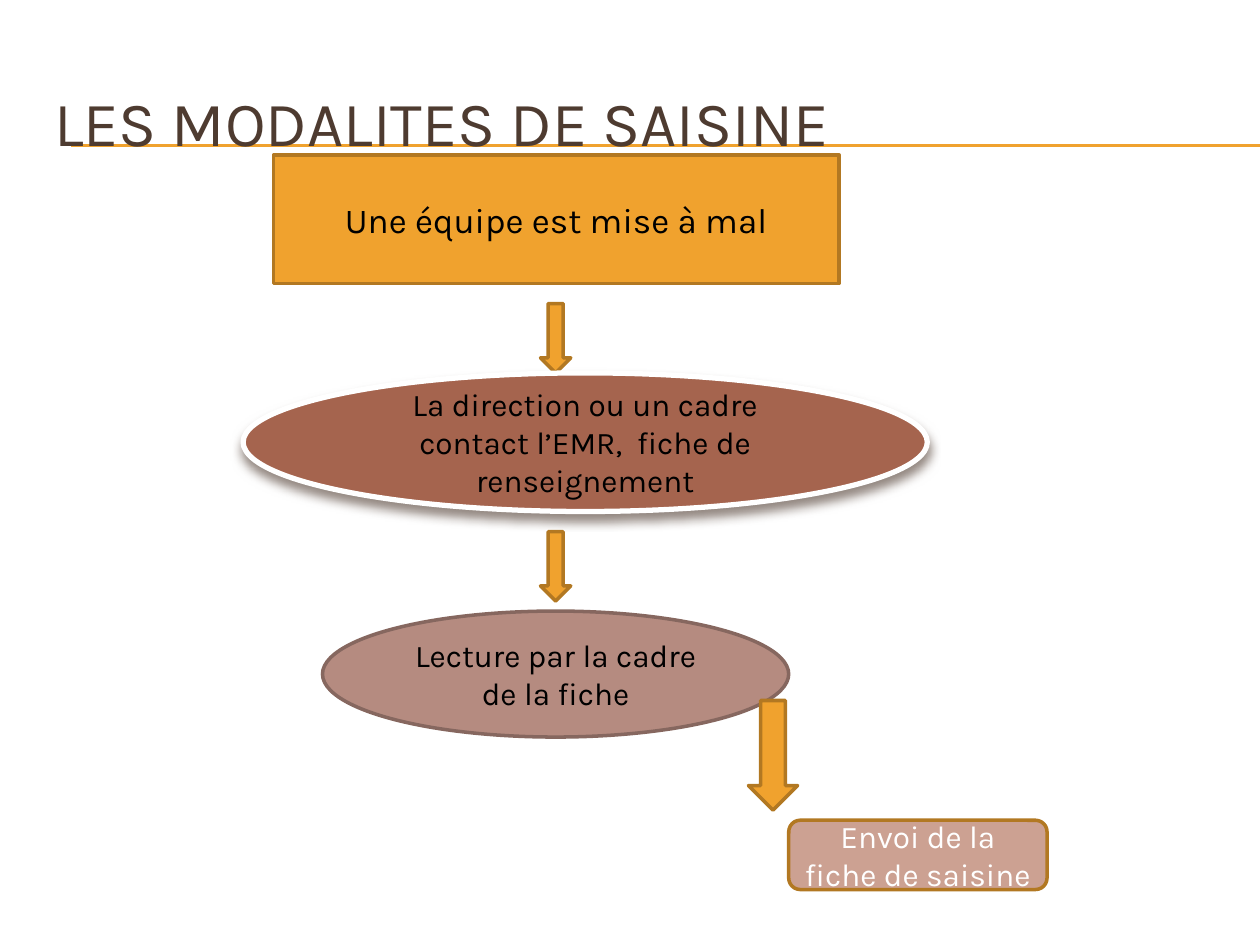
from lxml import etree
from pptx import Presentation
from pptx import util as u
from pptx.dml.color import RGBColor
from pptx.enum import shapes, text
from pptx.oxml import ns

FONT = "Karla"
KIND = shapes.MSO_SHAPE
TITLE = "LES MODALITES DE SAISINE"
RULES = [1.15, 1.16]
AMBER, AMBER_EDGE = "F0A22E", "B27822"
BROWN = "4E3B30"

STEPS = [
    ("Une équipe est mise à mal", KIND.RECTANGLE,
     (2.17, 1.23, 4.49, 1.02), AMBER, AMBER_EDGE, 2, 20, "000000"),
    ("", KIND.DOWN_ARROW, (4.29, 2.41, 0.24, 0.55), AMBER, AMBER_EDGE, 2, 18, "000000"),
    ("La direction ou un cadre contact l’EMR,  fiche de renseignement", KIND.OVAL,
     (1.93, 2.96, 5.43, 1.1), "A5644E", "FFFFFF", 3, 18, "000000"),
    ("Lecture par la cadre de la fiche", KIND.OVAL,
     (2.56, 4.85, 3.7, 1), "B58B80", "86675F", 2, 18, "000000"),
    ("", KIND.DOWN_ARROW, (5.94, 5.56, 0.39, 0.87), AMBER, AMBER_EDGE, 2, 18, "000000"),
    ("Envoi de la fiche de saisine", KIND.ROUNDED_RECTANGLE,
     (6.26, 6.51, 2.05, 0.55), "CCA192", AMBER_EDGE, 2, 18, "FFFFFF"),
    ("", KIND.DOWN_ARROW, (4.29, 4.22, 0.24, 0.55), AMBER, AMBER_EDGE, 2, 18, "000000"),
]
SHADOWED = STEPS[2]


def color(value):
    return RGBColor.from_string(value)


def write(shape, words, size, ink, align):
    frame = shape.text_frame
    frame.text = words
    frame.word_wrap = True
    frame.auto_size = text.MSO_AUTO_SIZE.NONE
    frame.vertical_anchor = text.MSO_ANCHOR.MIDDLE
    para = frame.paragraphs[0]
    para.alignment = align
    for span in para.runs:
        span.font.name = FONT
        span.font.size = u.Pt(size)
        span.font.color.rgb = color(ink)


def add_shadow(shape, tint, opacity, blur, distance, angle):
    effects = shape._element.spPr.find(ns.qn("a:effectLst"))
    outer = etree.SubElement(
        effects, ns.qn("a:outerShdw"), blurRad=str(u.Pt(blur)),
        dist=str(u.Pt(distance)), dir=str(angle * 60000), rotWithShape="0")
    fill = etree.SubElement(outer, ns.qn("a:srgbClr"), val=tint)
    etree.SubElement(fill, ns.qn("a:alpha"), val=str(opacity * 1000))


def add_rule(slide, y):
    rule = slide.shapes.add_connector(
        shapes.MSO_CONNECTOR.STRAIGHT,
        u.Inches(0.56), u.Inches(y), u.Inches(10), u.Inches(y))
    rule.line.color.rgb = color(AMBER)
    rule.line.width = u.Pt(0.75)
    etree.SubElement(rule._element.spPr, ns.qn("a:effectLst"))
    slide.shapes.title._element.addprevious(rule._element)


def add_step(slide, step):
    words, kind, place, fill, edge, width, size, ink = step
    shape = slide.shapes.add_shape(kind, *map(u.Inches, place))
    shape.shadow.inherit = False
    shape.fill.solid()
    shape.fill.fore_color.rgb = color(fill)
    shape.line.color.rgb = color(edge)
    shape.line.width = u.Pt(width)
    if words:
        write(shape, words, size, ink, text.PP_ALIGN.CENTER)
    if step is SHADOWED:
        add_shadow(shape, BROWN, 60, 6, 4, 90)


def main():
    deck = Presentation()
    deck.slide_width, deck.slide_height = u.Inches(10), u.Inches(7.5)
    slide = deck.slides.add_slide(deck.slide_layouts[5])
    title = slide.shapes.title
    title.left, title.top, title.width, title.height = map(
        u.Inches, (0.33, 0.5, 9.5, 0.92))
    write(title, TITLE, 36, BROWN, text.PP_ALIGN.LEFT)
    for y in RULES:
        add_rule(slide, y)
    for step in STEPS:
        add_step(slide, step)
    deck.save("out.pptx")


if __name__ == "__main__":
    main()
